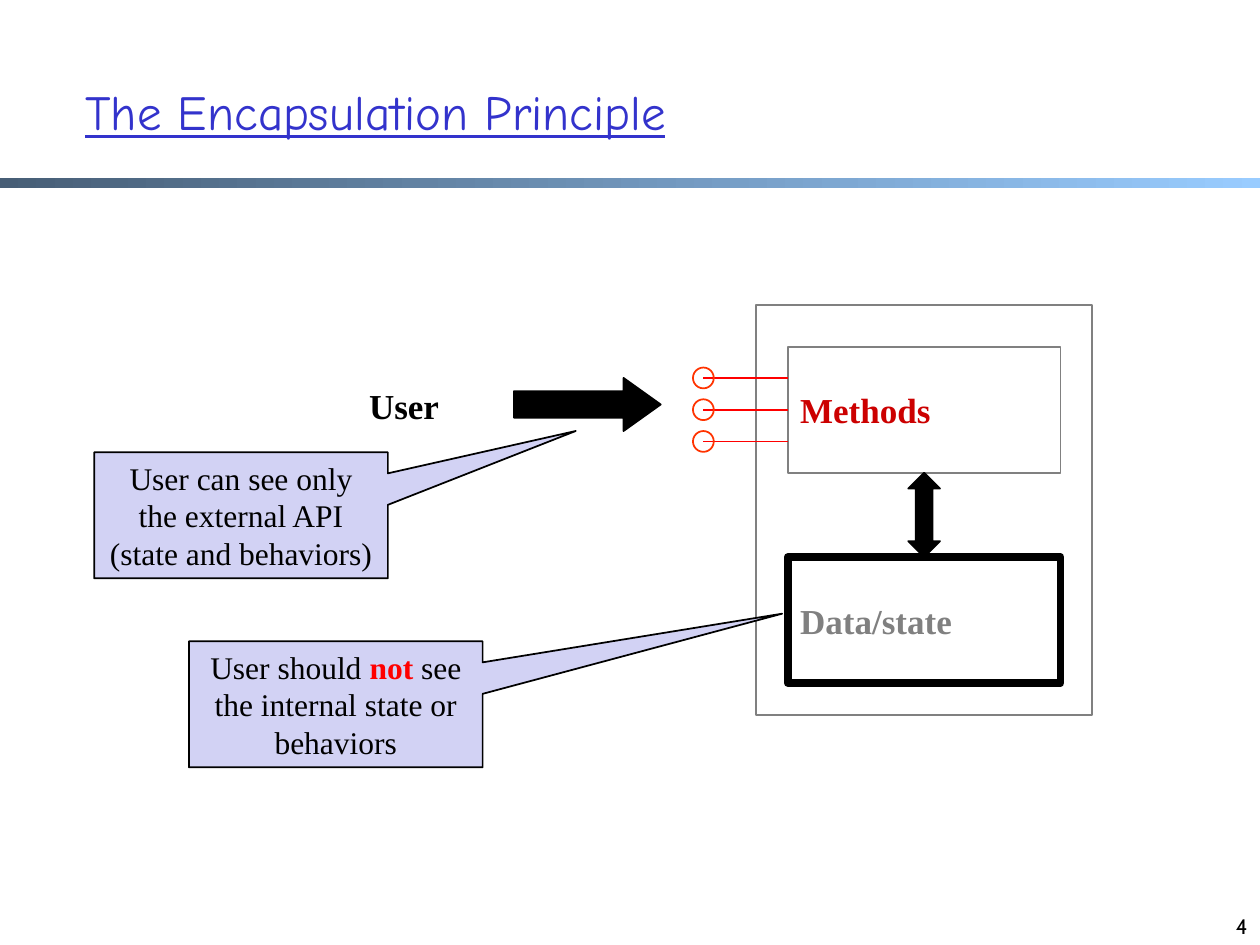
from lxml import etree
from pptx import Presentation
from pptx.dml.color import RGBColor
from pptx.enum import shapes, text
from pptx.oxml import ns
from pptx.util import Cm, Pt

THEME = {
    "colors": {
        "title": "3333CC", "ink": "000000", "paper": "FFFFFF", "gray": "808080",
        "methods": "CC0000", "alert": "FF0000", "port": "FF3300",
        "callout": "D2D2F4", "bar_start": "475E76", "bar_end": "99CCFF",
    },
    "fonts": {"title": "Comic Neue", "body": "Times New Roman", "page": "Cabin"},
    "sizes": {"title": 28, "label": 20, "callout": 18, "page": 12},
}

KIND = shapes.MSO_SHAPE
ANCHOR = text.MSO_ANCHOR
ALIGN = text.PP_ALIGN

LABEL = {"role": "label", "bold": True}
TEXTS = [
    ((1.47, 0.64, 21.59, 3.18), [("The Encapsulation Principle", "title")],
     {"role": "title", "font": "title", "underline": True}),
    ((7.19, 7.62, 1.93, 1.12), [("User", "ink")], {**LABEL, "wrap": False}),
    ((19.48, 17.78, 5.92, 1.27), [("4", "ink")],
     {"role": "page", "font": "page", "align": ALIGN.RIGHT, "anchor": ANCHOR.BOTTOM}),
]
BAR = (0, 3.58, 25.4, 0.21)
FRAME = (15.24, 6.15, 6.78, 8.26)
BOX_LEFT, BOX_WIDTH, BOX_HEIGHT = 15.88, 5.5, 2.54
BOXES = [
    ("Methods", "methods", 6.99, "gray", 1),
    ("Data/state", "gray", 11.23, "ink", 4.5),
]
USER_ARROW = (10.36, 7.62, 2.96, 1.07)
EXCHANGE_WIDTH = 0.64
PORTS, PORT_X, PORT_SIZE, PORT_GAP = 3, 14.18, 0.42, 0.64
CALLOUT_SIZE = (5.92, 2.54)
CALLOUTS = [
    ((3.81, 12.93), (1.52, -0.72),
     [("User should ", "ink"), ("not", "alert"), (" see the internal state or behaviors", "ink")]),
    ((1.9, 9.12), (1.14, -0.67),
     [("User can see only the external API (state and behaviors)", "ink")]),
]


def color(name):
    return RGBColor.from_string(THEME["colors"][name])


def write(holder, runs, role, font="body", align=ALIGN.LEFT, anchor=ANCHOR.MIDDLE,
          wrap=True, **emphasis):
    frame = holder.text_frame
    frame.word_wrap = wrap
    frame.vertical_anchor = anchor
    paragraph = frame.paragraphs[0]
    paragraph.alignment = align
    for words, tint in runs:
        run = paragraph.add_run()
        run.text = words
        run.font.color.rgb = color(tint)
        style = {"name": THEME["fonts"][font], "size": Pt(THEME["sizes"][role]),
                 "bold": tint == "alert", **emphasis}
        for attribute, value in style.items():
            setattr(run.font, attribute, value)


def draw(slide, kind, area, fill=None, line=None, width=1, adjust=()):
    figure = slide.shapes.add_shape(kind, *map(Cm, area))
    figure.shadow.inherit = False
    if fill:
        figure.fill.solid()
        figure.fill.fore_color.rgb = color(fill)
    else:
        figure.fill.background()
    if line:
        figure.line.color.rgb = color(line)
        figure.line.width = Pt(width)
    else:
        figure.line.fill.background()
    for index, value in enumerate(adjust):
        figure.adjustments[index] = value
    return figure


def draw_bar(slide):
    bar = draw(slide, KIND.RECTANGLE, BAR)
    bar.fill.gradient()
    bar.fill.gradient_angle = 0
    for stop, name in zip(bar.fill.gradient_stops, ("bar_start", "bar_end")):
        stop.color.rgb = color(name)


def draw_ports(slide, methods):
    middle = BOXES[0][2] + BOX_HEIGHT / 2
    for index in range(PORTS):
        step = index - PORTS // 2
        y = middle + step * PORT_GAP
        wire = slide.shapes.add_connector(
            shapes.MSO_CONNECTOR.STRAIGHT, Cm(BOX_LEFT), Cm(y), Cm(PORT_X), Cm(y))
        if step == 0:
            wire.begin_connect(methods, 1)
        wire.line.color.rgb = color("alert")
        wire.line.width = Pt(1)
        etree.SubElement(wire.element.spPr, ns.qn("a:effectLst"))
        draw(slide, KIND.OVAL, (PORT_X - PORT_SIZE / 2, y - PORT_SIZE / 2, PORT_SIZE, PORT_SIZE),
             line="port")


def main():
    deck = Presentation()
    deck.slide_width, deck.slide_height = Cm(25.4), Cm(19.05)
    slide = deck.slides.add_slide(deck.slide_layouts[6])

    draw_bar(slide)
    draw(slide, KIND.RECTANGLE, FRAME, line="gray")
    for area, runs, style in TEXTS:
        write(slide.shapes.add_textbox(*map(Cm, area)), runs, **style)
    draw(slide, KIND.RIGHT_ARROW, USER_ARROW, "ink", "ink", adjust=(0.5, 0.7))

    boxes = []
    for label, tint, top, line, width in BOXES:
        box = draw(slide, KIND.RECTANGLE, (BOX_LEFT, top, BOX_WIDTH, BOX_HEIGHT),
                   "paper", line, width)
        write(box, [(label, tint)], **LABEL)
        boxes.append(box)
    draw_ports(slide, boxes[0])

    exchange_top = BOXES[0][2] + BOX_HEIGHT
    exchange = (BOX_LEFT + (BOX_WIDTH - EXCHANGE_WIDTH) / 2, exchange_top,
                EXCHANGE_WIDTH, BOXES[1][2] - exchange_top)
    draw(slide, KIND.UP_DOWN_ARROW, exchange, "ink", "ink", adjust=(0.5, 0.53))

    for corner, tip, runs in CALLOUTS:
        callout = draw(slide, KIND.RECTANGULAR_CALLOUT, corner + CALLOUT_SIZE,
                       "callout", "ink", adjust=tip)
        write(callout, runs, "callout", align=ALIGN.CENTER, anchor=ANCHOR.TOP)

    deck.save("out.pptx")


if __name__ == "__main__":
    main()
